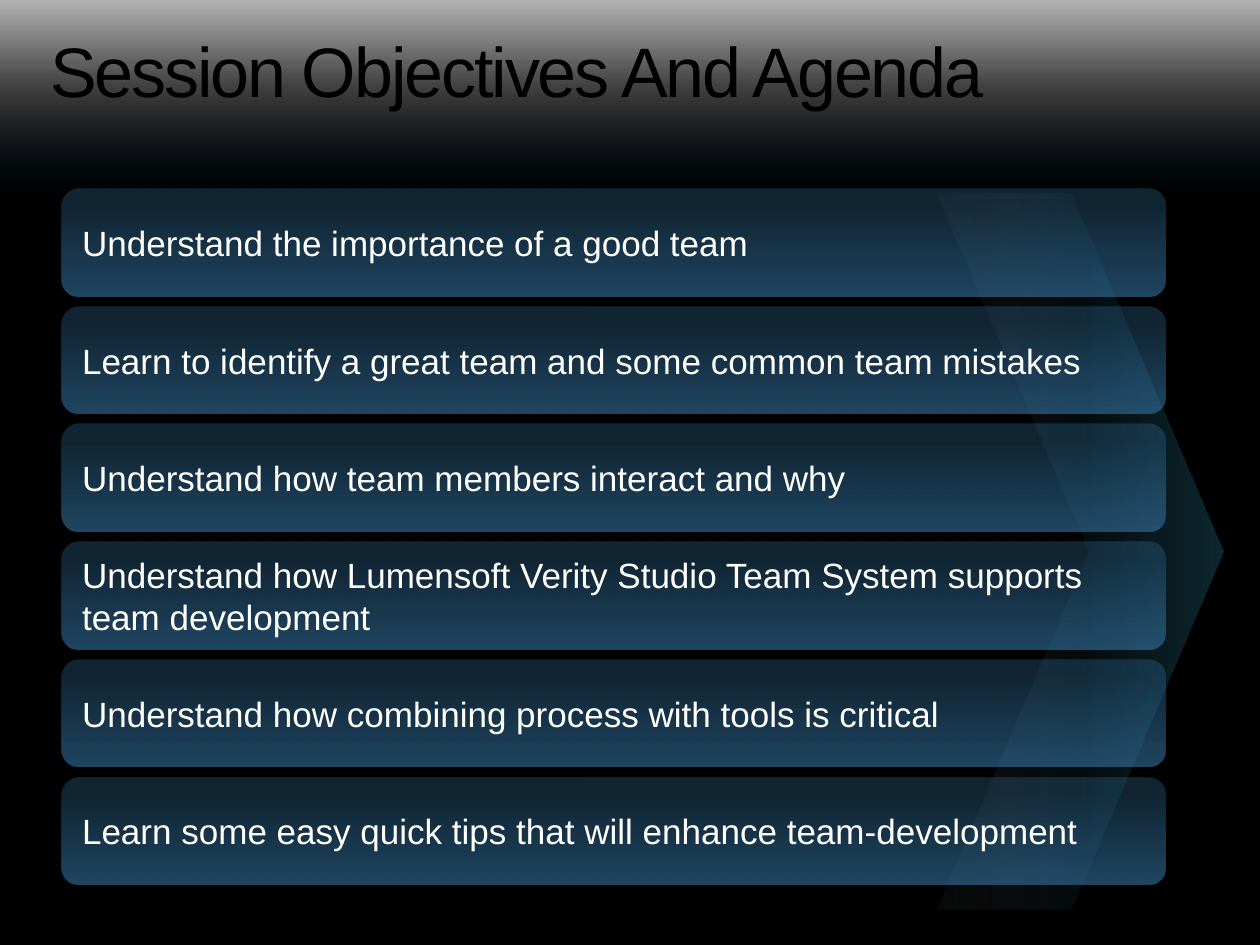
from lxml import etree
from pptx import Presentation
from pptx.dml.color import RGBColor as RGB
from pptx.enum.shapes import MSO_SHAPE as Shape
from pptx.enum.text import MSO_ANCHOR as Anchor, MSO_AUTO_SIZE as Auto, PP_ALIGN as Align
from pptx.oxml import parse_xml
from pptx.oxml.ns import nsdecls, qn
from pptx.util import Inches, Pt

theme = {
    "back": RGB(0, 0, 0),
    "head": {"name": "Arial", "size": Pt(40), "color": RGB(0, 0, 0)},
    "body": {"name": "Arial", "size": Pt(20), "color": RGB(255, 255, 255)},
    "band": (270, [(0, "0070C0", 0), (41, "FFFFFF", 15), (56, "FFFFFF", 25), (100, "FFFFFF", 70)]),
    "arrow": (180, [(0, "27728D", 34), (50, "27728D", 9), (100, "E1E8ED", 3)]),
    "card": (270, [(0, "3778A7", 58), (87, "3778A7", 29)]),
}

deck = Presentation()
deck.slide_width, deck.slide_height = Inches(10), Inches(7.5)
col, row = deck.slide_width / 100, deck.slide_height / 100

slide = deck.slides.add_slide(deck.slide_layouts[5])
slide.background.fill.solid()
slide.background.fill.fore_color.rgb = theme["back"]


def draw(kind, x, y, wide, high, blend):
    shape = slide.shapes.add_shape(kind, *map(int, (x * col, y * row, wide * col, high * row)))
    shape.shadow.inherit = False
    shape.line.fill.background()
    angle, stops = blend
    marks = "".join(
        f'<a:gs pos="{at * 1000}"><a:srgbClr val="{tint}"><a:alpha val="{alpha * 1000}"/></a:srgbClr></a:gs>'
        for at, tint, alpha in stops)
    grad = parse_xml(f'<a:gradFill {nsdecls("a")} rotWithShape="1"><a:gsLst>{marks}</a:gsLst>'
                     f'<a:lin ang="{angle * 60000}" scaled="0"/></a:gradFill>')
    shape.element.spPr.find(qn("a:prstGeom")).addnext(grad)
    return shape


def write(shape, text, style, frame, para):
    box = shape.text_frame
    box.text = text
    line = box.paragraphs[0]
    for item, values in ((box, frame), (line, para)):
        for key, value in values.items():
            setattr(item, key, value)
    font = line.runs[0].font
    font.name, font.size, font.color.rgb = style["name"], style["size"], style["color"]
    return line.runs[0]


band = draw(Shape.RECTANGLE, 0, 0, 100, 20.53, theme["band"])
glow = etree.SubElement(band.element.spPr.find(qn("a:effectLst")), qn("a:outerShdw"),
                        blurRad=str(Pt(3.1)), dist=str(Pt(2)), dir="5400000", rotWithShape="0")
shade = etree.SubElement(glow, qn("a:srgbClr"), val="000000")
etree.SubElement(shade, qn("a:alpha"), val="38000")

arrow = draw(Shape.CHEVRON, 74.3, 20.53, 22.8, 75.73, theme["arrow"])
arrow.adjustments[0] = 0.53

goals = [
    "Understand the importance of a good team",
    "Learn to identify a great team and some common team mistakes",
    "Understand how team members interact and why",
    "Understand how Lumensoft Verity Studio Team System supports team development",
    "Understand how combining process with tools is critical",
    "Learn some easy quick tips that will enhance team-development",
]
inset = {"margin_left": Inches(0.12), "margin_right": Inches(0.12),
         "margin_top": Inches(0.06), "margin_bottom": Inches(0.06),
         "vertical_anchor": Anchor.MIDDLE, "word_wrap": True}
for i, goal in enumerate(goals):
    card = draw(Shape.ROUNDED_RECTANGLE, 4.9, 20 + 12.45 * i, 87.6, 11.33, theme["card"])
    write(card, goal, theme["body"], inset, {"alignment": Align.LEFT})

title = slide.shapes.title
spot = {"left": 4 * col, "top": 3.2 * row, "width": 91.7 * col, "height": 8.93 * row}
for key, value in spot.items():
    setattr(title, key, int(value))
run = write(title, "Session Objectives And Agenda", theme["head"],
            {"margin_left": 0, "margin_right": Inches(0.1),
             "margin_top": Inches(0.05), "margin_bottom": Inches(0.05),
             "vertical_anchor": Anchor.TOP, "word_wrap": True, "auto_size": Auto.NONE},
            {"alignment": Align.LEFT, "line_spacing": 0.9})
run.font.element.set("spc", "-120") if hasattr(run.font, "element") else run._r.get_or_add_rPr().set("spc", "-120")
title.element.getparent().append(title.element)

deck.save("out.pptx")
